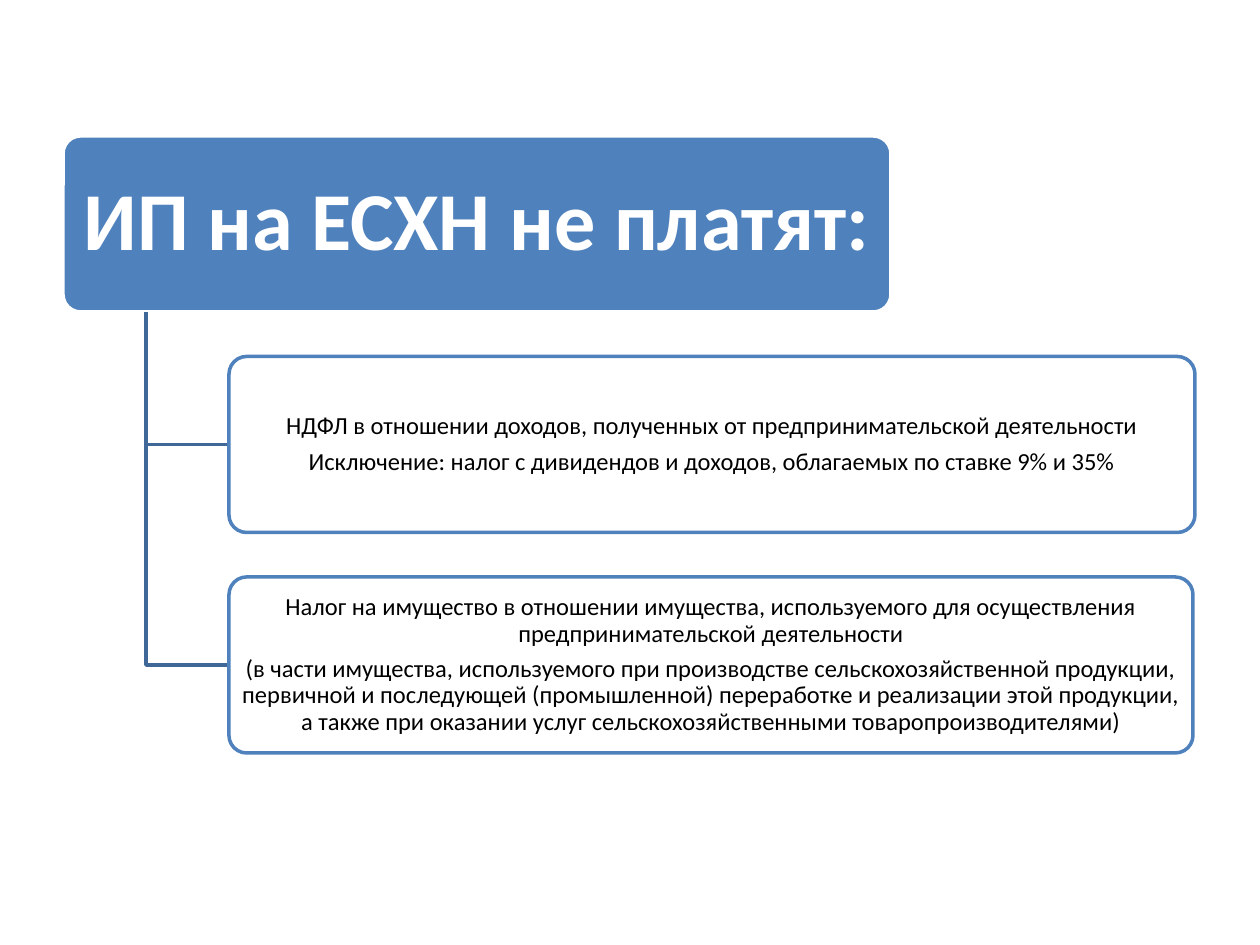
from pptx import Presentation
from pptx.dml.color import RGBColor
from pptx.enum.shapes import MSO_SHAPE as Shape
from pptx.enum.text import MSO_ANCHOR as Anchor, PP_ALIGN as Align
from pptx.util import Emu, Pt

SCALE = 914400 / 126
WHITE = RGBColor(0xFF, 0xFF, 0xFF)
BLACK = RGBColor(0, 0, 0)
BLUE = RGBColor(0x4F, 0x81, 0xBD)
NAVY = RGBColor(0x3F, 0x67, 0x97)


def px(n):
    return Emu(round(n * SCALE))


def write(shape, lines, size, color, bold=False, pad=(4, 3), after=5):
    frame = shape.text_frame
    frame.word_wrap = True
    frame.vertical_anchor = Anchor.MIDDLE
    frame.margin_left = frame.margin_right = px(pad[0])
    frame.margin_top = frame.margin_bottom = px(pad[1])
    for i, line in enumerate(lines):
        para = frame.add_paragraph() if i else frame.paragraphs[0]
        para.alignment = Align.CENTER
        para.line_spacing = 0.9
        para.space_after = Pt(after)
        run = para.add_run()
        run.text = line
        font = run.font
        font.name, font.size, font.bold = "Calibri", Pt(size), bold
        font.color.rgb = color


deck = Presentation()
deck.slide_width, deck.slide_height = px(1260), px(945)
slide = deck.slides.add_slide(deck.slide_layouts[6])
shapes = slide.shapes

HIGH = 176
TOP = 136
STEP = 220.5
STEM = 146
LEFT = 229

head = ["ИП на ЕСХН не платят:"]
taxes = [
    (966, [
        "НДФЛ в отношении доходов, полученных от предпринимательской деятельности",
        "Исключение: налог с дивидендов и доходов, облагаемых по ставке 9% и 35%",
    ]),
    (964, [
        "Налог на имущество в отношении имущества, используемого для осуществления "
        "предпринимательской деятельности",
        "(в части имущества, используемого при производстве сельскохозяйственной "
        "продукции, первичной и последующей (промышленной) переработке и реализации "
        "этой продукции, а также при оказании услуг сельскохозяйственными "
        "товаропроизводителями)",
    ]),
]

boxes = [(63, 828, BLUE, WHITE, head, dict(size=47, color=WHITE, bold=True, pad=(12, 8), after=16))]
for wide, lines in taxes:
    boxes.append((LEFT, wide, WHITE, BLUE, lines, dict(size=14, color=BLACK)))

for i, (left, wide, fill, edge, lines, style) in enumerate(boxes):
    top = TOP + i * STEP
    if i:
        mid = top + HIGH / 2
        pen = shapes.build_freeform(px(STEM), px(TOP + HIGH))
        pen.add_line_segments([(px(STEM), px(mid)), (px(LEFT), px(mid))], close=False)
        elbow = pen.convert_to_shape()
        elbow.shadow.inherit = False
        elbow.fill.background()
        elbow.line.color.rgb = NAVY
        elbow.line.width = Pt(2)
    box = shapes.add_shape(Shape.ROUNDED_RECTANGLE, px(left), px(top), px(wide), px(HIGH))
    box.adjustments[0] = 0.1
    box.shadow.inherit = False
    box.fill.solid()
    box.fill.fore_color.rgb = fill
    box.line.color.rgb = edge
    box.line.width = Pt(2)
    write(box, lines, **style)

deck.save("out.pptx")
